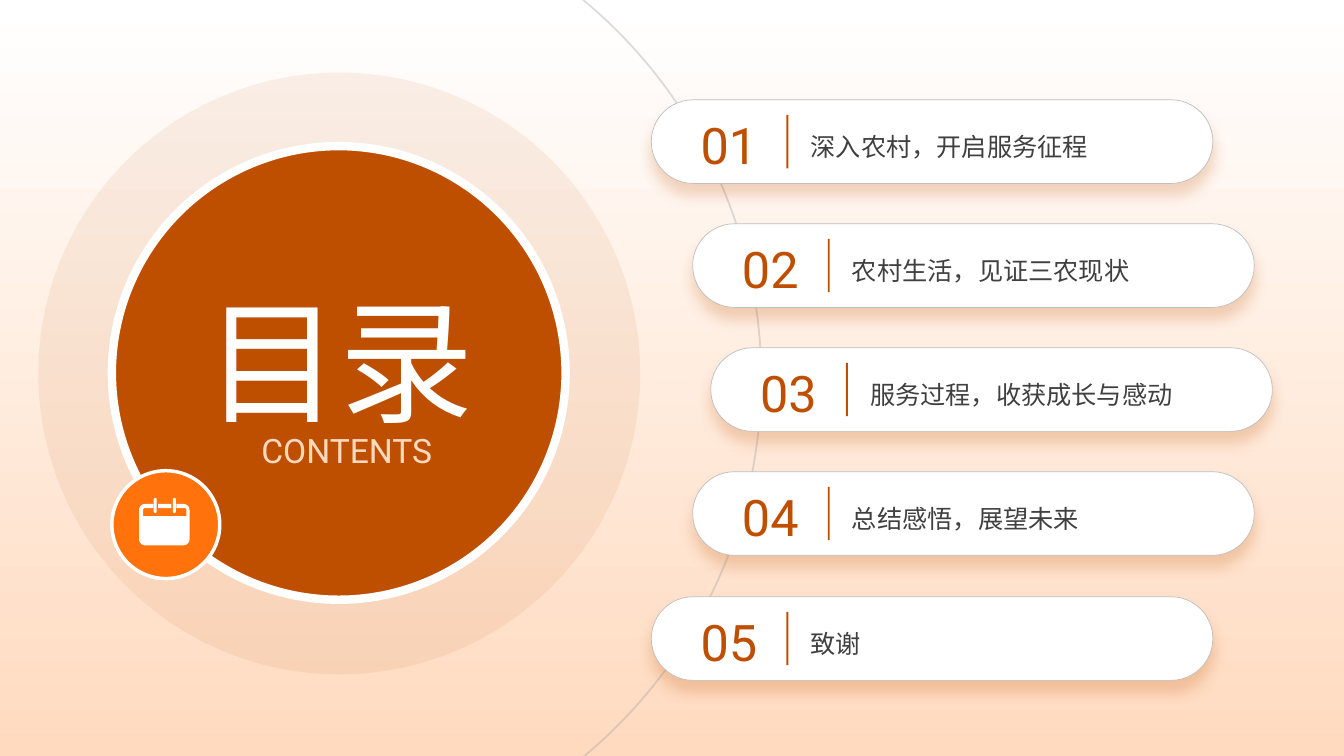
from math import cos, radians, sin

from lxml.etree import SubElement
from pptx import Presentation
from pptx.dml.color import RGBColor
from pptx.enum.shapes import MSO_SHAPE as Shape
from pptx.enum.text import MSO_ANCHOR as Anchor, MSO_AUTO_SIZE as AutoSize, PP_ALIGN as Align
from pptx.oxml.ns import qn
from pptx.util import Pt

PX = 9144  # EMU per px, 100 px to the inch
RUST = RGBColor(0xBF, 0x4F, 0x00)
ORANGE = RGBColor(0xFF, 0x72, 0x0C)
PEACH = RGBColor(0xFF, 0xDA, 0xBF)
WHITE = RGBColor(0xFF, 0xFF, 0xFF)
SILVER = RGBColor(0xBF, 0xBF, 0xBF)
GREY = RGBColor(0xA6, 0xA6, 0xA6)
CHARCOAL = RGBColor(0x40, 0x40, 0x40)

deck = Presentation()
deck.slide_width, deck.slide_height = 1333 * PX, 750 * PX
page = deck.slides.add_slide(deck.slide_layouts[5])


def add_shape(kind, box, fill=None, line=None, width=0):
    shape = page.shapes.add_shape(kind, *[n * PX for n in box])
    shape.shadow.inherit = False
    if fill is None:
        shape.fill.background()
    else:
        shape.fill.solid()
        shape.fill.fore_color.rgb = fill
    if line is None:
        shape.line.fill.background()
    else:
        shape.line.color.rgb = line
        shape.line.width = Pt(width)
    return shape


def arc(x, y, radius, start, stop, steps=8):
    angles = [radians(start + (stop - start) * i / steps) for i in range(steps + 1)]
    return [(x + radius * cos(a), y + radius * sin(a)) for a in angles]


# Background gradient
backdrop = add_shape(Shape.RECTANGLE, (0, 0, 1334, 750))
backdrop.fill.gradient()
backdrop.fill.gradient_angle = 270
for stop, colour in zip(backdrop.fill.gradient_stops, (WHITE, PEACH)):
    stop.color.rgb = colour

# Circles
halo = add_shape(Shape.OVAL, (38, 72, 597, 597), RUST)
add_shape(Shape.OVAL, (111, 145, 450, 450), RUST, WHITE, 6)
add_shape(Shape.OVAL, (111, 467, 107, 107), ORANGE, WHITE, 2.5)
orbit = add_shape(Shape.OVAL, (-220, -112, 975, 975), line=GREY, width=1.25)
for shape, percent in ((halo, 8), (orbit, 39)):
    colour = next(shape.element.spPr.iter(qn("a:srgbClr")))
    SubElement(colour, qn("a:alpha"), val=str(percent * 1000))

# Calendar icon
frame = (
    [(152, 500), (152, 504)] + arc(144, 506, 2, 270, 180)
    + [(142, 512), (185, 512)] + arc(183, 506, 2, 0, -90)
    + [(175, 504), (175, 500)] + arc(182, 506, 6, 270, 360)
    + arc(182, 535, 6, 0, 90) + arc(144, 535, 6, 90, 180) + arc(144, 506, 6, 180, 270)
)
rail = [(157, 500), (170, 500), (170, 504), (157, 504)]
rings = [arc(x, 495.5, 1.5, 180, 360) + arc(x, 507.5, 1.5, 0, 180) for x in (154, 173)]
builder = page.shapes.build_freeform(152 * PX, 500 * PX)
for outline in (frame, rail, *rings):
    points = [(x * PX, y * PX) for x, y in outline]
    builder.move_to(*points[0])
    builder.add_line_segments(points[1:], close=True)
calendar = builder.convert_to_shape()
calendar.shadow.inherit = False
calendar.fill.solid()
calendar.fill.fore_color.rgb = WHITE
calendar.line.fill.background()

# Contents pills: box, text, size, font, colour, line spacing, align, anchor, inset
labels = [((186, 418, 316, 50), "CONTENTS", 24, "Roboto", PEACH, 1.1, Align.CENTER, Anchor.TOP, 10)]
entries = [
    (646, "深入农村，开启服务征程"),
    (687, "农村生活，见证三农现状"),
    (705, "服务过程，收获成长与感动"),
    (687, "总结感悟，展望未来"),
    (646, "致谢"),
]
for i, (left, entry) in enumerate(entries):
    top = 99 + i * 493 // 4
    pill = add_shape(Shape.ROUNDED_RECTANGLE, (left, top, 557, 83), WHITE, SILVER, 0.5)
    pill.adjustments[0] = 0.5
    shadow = SubElement(
        pill.element.spPr.find(qn("a:effectLst")), qn("a:outerShdw"),
        blurRad=str(Pt(10)), dist=str(Pt(8)), dir="5400000", algn="t", rotWithShape="0",
    )
    tint = SubElement(shadow, qn("a:srgbClr"), val=str(RUST))
    SubElement(tint, qn("a:alpha"), val="21000")
    add_shape(Shape.RECTANGLE, (left + 134, top + 15, 2, 53), RUST)
    labels.append(((left + 23, top + 11, 108, 61), f"{i + 1:02}", 36, "Roboto", RUST,
                   1.1, Align.CENTER, Anchor.MIDDLE, 10))
    labels.append(((left + 153, top + 3, 382, 77), entry, 18, "Cabin", CHARCOAL,
                   1.3, Align.LEFT, Anchor.MIDDLE, 5))

# Title, brought in front of the circles
title = page.shapes.title
title.element.getparent().append(title.element)
title_label = ((181, 255, 312, 172), "目录", 96, "Cabin", WHITE, 1.1, Align.CENTER, Anchor.TOP, 10)

# Text
for label in [title_label] + labels:
    box, text, size, font, colour, spacing, align, anchor, inset = label
    left, top, width, height = [n * PX for n in box]
    if label is title_label:
        holder = title
        holder.left, holder.top, holder.width, holder.height = left, top, width, height
    else:
        holder = page.shapes.add_textbox(left, top, width, height)
    frame = holder.text_frame
    frame.text = text
    frame.word_wrap = True
    frame.auto_size = AutoSize.NONE
    frame.vertical_anchor = anchor
    frame.margin_left = frame.margin_right = inset * PX
    frame.margin_top = frame.margin_bottom = 5 * PX
    para = frame.paragraphs[0]
    para.alignment = align
    para.line_spacing = spacing
    para.space_before = Pt(0)
    span = para.runs[0]
    span.font.size = Pt(size)
    span.font.name = font
    span.font.color.rgb = colour

deck.save("out.pptx")
